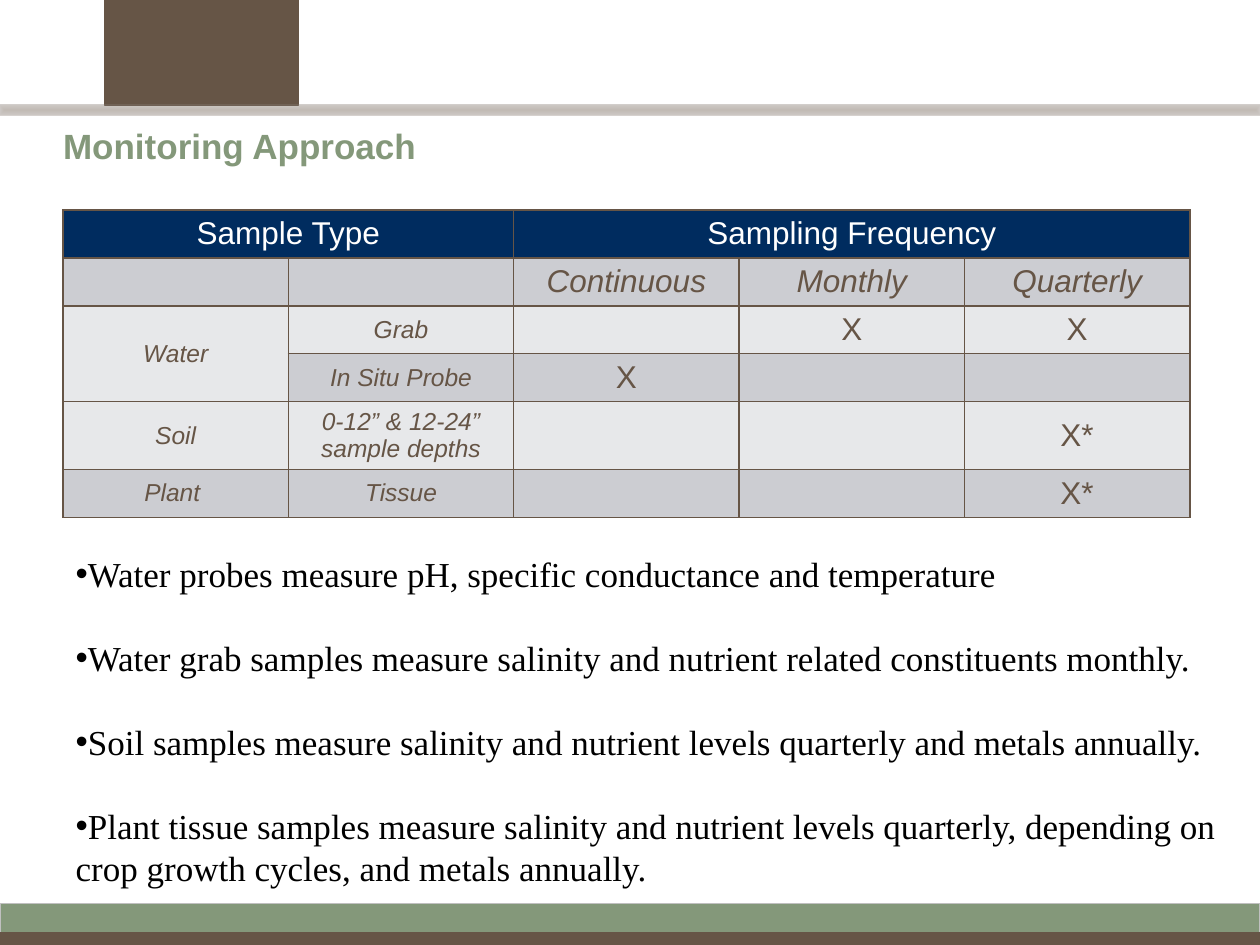
from dataclasses import dataclass

from lxml.etree import SubElement
from pptx import Presentation
from pptx.dml.color import RGBColor
from pptx.enum.shapes import MSO_SHAPE as Shape
from pptx.enum.text import MSO_ANCHOR as Anchor, MSO_AUTO_SIZE as AutoSize, PP_ALIGN as Align
from pptx.oxml import parse_xml
from pptx.oxml.ns import nsdecls, qn
from pptx.util import Pt


@dataclass(frozen=True)
class Theme:
    green: str = "84987A"
    brown: str = "665546"
    taupe: str = "8A8079"
    silver: str = "C0C0C0"
    navy: str = "002C5F"
    dark_band: str = "CCCDD2"
    light_band: str = "E7E8EA"
    white: str = "FFFFFF"
    black: str = "000000"
    heading_font: str = "Arial"
    body_font: str = "Times New Roman"
    text_size: int = 20
    table_size: int = 18
    label_size: int = 14


THEME = Theme()

TABLE_ROWS = [
    ["Sample Type", "", "Sampling Frequency", "", ""],
    ["", "", "Continuous", "Monthly", "Quarterly"],
    ["Water", "Grab", "", "X", "X"],
    ["", "In Situ Probe", "X", "", ""],
    ["Soil", "0-12” & 12-24” sample depths", "", "", "X*"],
    ["Plant ", "Tissue", "", "", "X*"],
]
MERGES = [((0, 0), (0, 1)), ((0, 2), (0, 4)), ((2, 0), (3, 0))]
ROW_HEIGHTS = [27.4, 27.4, 27.4, 27.4, 38.5, 27.4]
COLUMN_WIDTH = 128.8

BULLETS = [
    "Water probes measure pH, specific conductance and temperature",
    "Water grab samples measure salinity and nutrient related constituents monthly.",
    "Soil samples measure salinity and nutrient levels quarterly and metals annually.",
    "Plant tissue samples measure salinity and nutrient levels quarterly, "
    "depending on crop growth cycles, and metals annually.",
]


def rgb(color):
    return RGBColor.from_string(color)


def set_font(paragraph, name, size, color, bold=False, italic=False):
    font = paragraph.font
    font.name, font.size = name, Pt(size)
    font.bold, font.italic = bold, italic
    font.color.rgb = rgb(color)


def place(shape, left, top, width, height):
    shape.left, shape.top = Pt(left), Pt(top)
    shape.width, shape.height = Pt(width), Pt(height)


def add_band(slide, left, top, width, height, fill=None, line=None):
    band = slide.shapes.add_shape(Shape.RECTANGLE, Pt(left), Pt(top), Pt(width), Pt(height))
    band.shadow.inherit = False
    if fill:
        band.fill.solid()
        band.fill.fore_color.rgb = rgb(fill)
    else:
        band.fill.background()
    if line:
        band.line.color.rgb = rgb(line)
        band.line.width = Pt(0.75)
    else:
        band.line.fill.background()
    return band


def set_soft_gradient(shape, inner, outer):
    """Fill from the centre outwards with two 40 % opaque colours."""
    stops = "".join(
        f'<a:gs pos="{position}"><a:srgbClr val="{color}"><a:alpha val="40000"/></a:srgbClr></a:gs>'
        for position, color in ((0, inner), (100000, outer))
    )
    gradient = parse_xml(
        f'<a:gradFill {nsdecls("a")}><a:gsLst>{stops}</a:gsLst><a:path path="shape">'
        '<a:fillToRect l="50000" t="50000" r="50000" b="50000"/></a:path></a:gradFill>'
    )
    properties = shape.element.spPr
    properties.replace(properties.find(qn("a:noFill")), gradient)


def set_title(title, text):
    place(title, 36, 72, 222, 30)
    frame = title.text_frame
    frame.margin_left = frame.margin_right = frame.margin_top = frame.margin_bottom = 0
    frame.vertical_anchor = Anchor.TOP
    frame.auto_size = AutoSize.NONE
    frame.text = text
    paragraph = frame.paragraphs[0]
    paragraph.alignment = Align.LEFT
    paragraph.line_spacing = Pt(23)
    set_font(paragraph, THEME.heading_font, THEME.text_size, THEME.green, bold=True)


def add_borders(cell):
    properties = cell._tc.get_or_add_tcPr()
    for side in ("lnL", "lnR", "lnT", "lnB"):
        line = SubElement(properties, qn(f"a:{side}"), w=str(Pt(1)))
        SubElement(SubElement(line, qn("a:solidFill")), qn("a:srgbClr"), val=THEME.brown)


def format_cell(cell, row, column, text):
    add_borders(cell)
    cell.fill.solid()
    if row == 0:
        fill = THEME.navy
    else:
        fill = THEME.dark_band if row % 2 else THEME.light_band
    cell.fill.fore_color.rgb = rgb(fill)
    cell.vertical_anchor = Anchor.MIDDLE
    cell.text = text
    paragraph = cell.text_frame.paragraphs[0]
    paragraph.alignment = Align.CENTER
    is_label = row > 1 and column < 2
    set_font(
        paragraph,
        THEME.heading_font,
        THEME.label_size if is_label else THEME.table_size,
        THEME.brown if row else THEME.white,
        italic=is_label or row == 1,
    )


def add_sampling_table(slide):
    columns = len(TABLE_ROWS[0])
    table = slide.shapes.add_table(
        len(TABLE_ROWS), columns, Pt(36), Pt(120), Pt(COLUMN_WIDTH * columns), Pt(sum(ROW_HEIGHTS))
    ).table
    table.first_row = table.horz_banding = False
    for column in table.columns:
        column.width = Pt(COLUMN_WIDTH)
    for row, (height, texts) in enumerate(zip(ROW_HEIGHTS, TABLE_ROWS)):
        table.rows[row].height = Pt(height)
        for column, text in enumerate(texts):
            format_cell(table.cell(row, column), row, column, text)
    for first, last in MERGES:
        table.cell(*first).merge(table.cell(*last))


def set_bullets(body, texts):
    place(body, 36, 312, 684, 225)
    frame = body.text_frame
    frame.word_wrap = True
    frame.auto_size = AutoSize.NONE
    frame.vertical_anchor = Anchor.TOP
    for index, text in enumerate(texts):
        paragraph = frame.add_paragraph() if index else frame.paragraphs[0]
        paragraph.text = text
        paragraph.alignment = Align.LEFT
        paragraph.line_spacing = Pt(24)
        paragraph.space_before = Pt(24 if index else 0)
        properties = paragraph._p.get_or_add_pPr()
        properties.set("marL", "0")
        properties.set("indent", "0")
        SubElement(properties, qn("a:buChar"), char="•")
        set_font(paragraph, THEME.body_font, THEME.text_size, THEME.black)


def main():
    presentation = Presentation()
    presentation.slide_width, presentation.slide_height = Pt(720), Pt(540)
    slide = presentation.slides.add_slide(presentation.slide_layouts[1])
    title, body = slide.placeholders

    # Footer and header bands
    add_band(slide, 0, 516.24, 720, 18, THEME.green, THEME.silver)
    add_band(slide, 0, 532.8, 720, 7.2, THEME.brown, THEME.brown)
    add_band(slide, 59.76, 0, 111, 60, THEME.brown, THEME.brown)
    rule = add_band(slide, 0, 59.76, 720, 6)
    set_soft_gradient(rule, THEME.brown, THEME.taupe)

    # Content
    set_title(title, "Monitoring Approach")
    add_sampling_table(slide)
    set_bullets(body, BULLETS)

    presentation.save("out.pptx")


if __name__ == "__main__":
    main()
